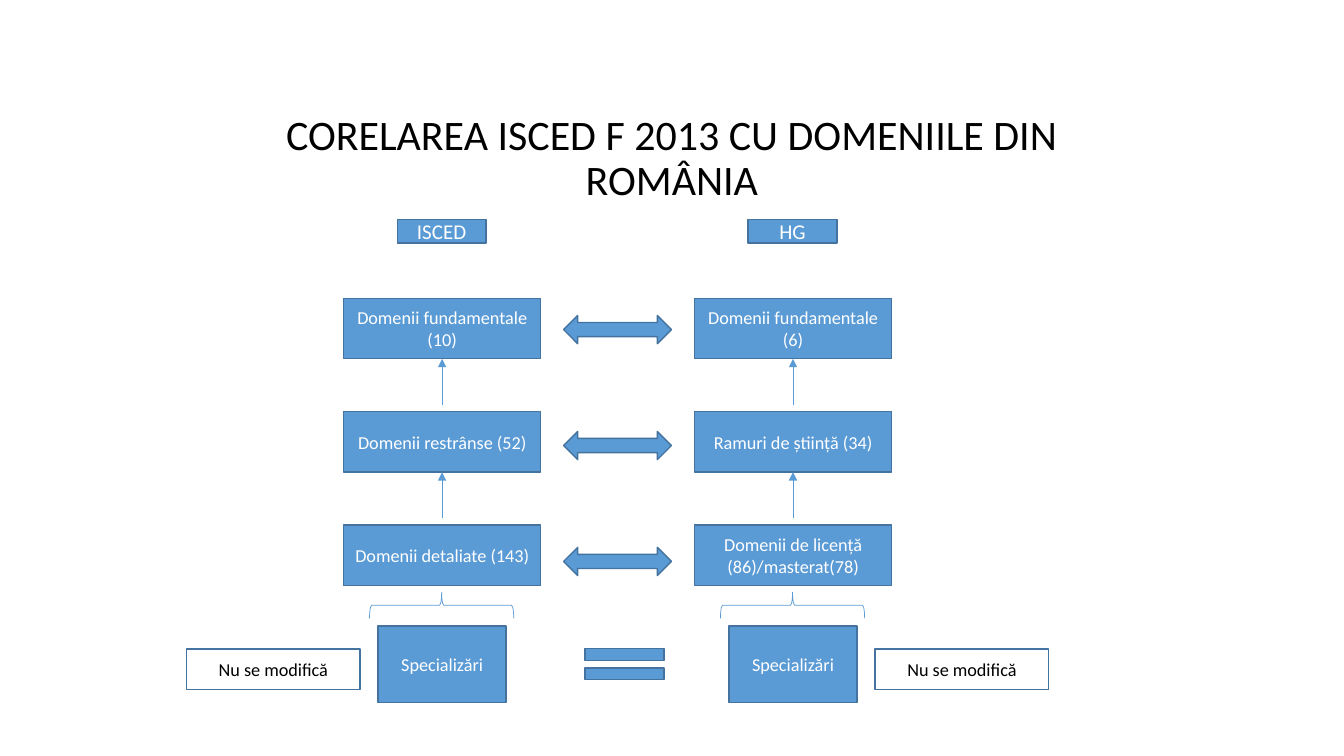
from pptx import Presentation
from pptx.dml.color import RGBColor
from pptx.enum.dml import MSO_THEME_COLOR
from pptx.enum.shapes import MSO_CONNECTOR, MSO_SHAPE
from pptx.enum.text import MSO_ANCHOR, MSO_AUTO_SIZE, PP_ALIGN
from pptx.oxml.ns import qn
from pptx.util import Inches, Pt
from lxml import etree

BLUE = RGBColor(0x5B, 0x9B, 0xD5)
EDGE = RGBColor(0x43, 0x73, 0x9E)
WHITE = RGBColor(0xFF, 0xFF, 0xFF)
BLACK = RGBColor(0, 0, 0)
RECT = MSO_SHAPE.RECTANGLE
BRACE = MSO_SHAPE.LEFT_BRACE
ARROW = MSO_SHAPE.LEFT_RIGHT_ARROW
EQUAL = MSO_SHAPE.MATH_EQUAL
LINE = MSO_CONNECTOR.STRAIGHT
MIDDLE = MSO_ANCHOR.MIDDLE
CENTER = PP_ALIGN.CENTER
FIXED = MSO_AUTO_SIZE.NONE

FRAME = {
    "word_wrap": True,
    "auto_size": FIXED,
    "vertical_anchor": MIDDLE,
    "margin_left": Inches(0.08),
    "margin_right": Inches(0.08),
    "margin_top": Inches(0.04),
    "margin_bottom": Inches(0.04),
}
WIDE = FRAME | {"margin_left": Inches(0.15), "margin_right": Inches(0.15)}


def apply(target, values):
    for name, value in values.items():
        setattr(target, name, value)


def write(shape, text, size, color, frame=FRAME, space=1.0):
    apply(shape.text_frame, frame)
    shape.text_frame.text = text
    para = shape.text_frame.paragraphs[0]
    apply(para, {"alignment": CENTER, "line_spacing": space})
    apply(para.font, {"name": "Calibri", "size": Pt(size), "bold": False})
    para.font.color.rgb = color


def add_shape(slide, kind, box, fill=BLUE, edge=EDGE, width=1):
    shape = slide.shapes.add_shape(kind, *map(Inches, box))
    shape.shadow.inherit = False
    if fill is None:
        shape.fill.background()
    else:
        shape.fill.solid()
        shape.fill.fore_color.rgb = fill
    shape.line.color.rgb = edge
    shape.line.width = Pt(width)
    return shape


def add_label(slide, box, text, size=13, fill=BLUE, color=WHITE):
    shape = add_shape(slide, RECT, box, fill)
    write(shape, text, size, color)
    return shape


def add_rise(slide, lower, upper):
    mid = upper.left + upper.width // 2
    line = slide.shapes.add_connector(
        LINE, mid, lower.top - Inches(0.07), mid, upper.top + upper.height)
    line.end_connect(upper, 2)
    line.line.color.rgb = BLUE
    line.line.width = Pt(0.5)
    props = line.line._get_or_add_ln()
    etree.SubElement(props, qn("a:tailEnd"), type="triangle")
    etree.SubElement(line._element.spPr, qn("a:effectLst"))


def draw_title(slide, box, text):
    title = slide.shapes.title
    names = ("left", "top", "width", "height")
    apply(title, dict(zip(names, map(Inches, box))))
    write(title, text, 30, BLACK, WIDE, 0.9)


def draw_column(slide, left, top, head, levels, side):
    add_label(slide, (left + 0.53, top, 0.88, 0.23), head, 15)
    boxes = [
        add_label(slide, (left, top + 0.78 + row * 1.125, 1.95, 0.6), text)
        for row, text in enumerate(levels)
    ]
    for upper, lower in zip(boxes, boxes[1:]):
        add_rise(slide, lower, upper)
    brace = add_shape(
        slide, BRACE, (left + 0.84, top + 3.11, 0.26, 1.43), None, BLUE, 0.5)
    brace.rotation = 90
    add_label(slide, (left + 0.34, top + 4.03, 1.27, 0.76), "Specializări")
    add_label(slide, (left + side, top + 4.26, 1.72, 0.4),
              "Nu se modifică", fill=None, color=BLACK)


def draw_links(slide, left, top):
    for row in range(3):
        add_shape(slide, ARROW, (left, top + row * 1.15, 1.07, 0.28))
    equal = add_shape(slide, EQUAL, (left + 0.07, top + 3.21, 1.07, 0.5))
    equal.adjustments[0] = 0.235
    equal.adjustments[1] = 0.144


def main():
    deck = Presentation()
    apply(deck, {"slide_width": Inches(13.33), "slide_height": Inches(7.5)})
    slide = deck.slides.add_slide(deck.slide_layouts[5])
    slide.background.fill.solid()
    slide.background.fill.fore_color.theme_color = MSO_THEME_COLOR.BACKGROUND_1
    draw_title(slide, (1.86, 1.09, 9.61, 0.98),
               "CORELAREA ISCED F 2013 CU DOMENIILE DIN ROMÂNIA")
    draw_column(slide, 3.41, 2.18, "ISCED", (
        "Domenii fundamentale (10)",
        "Domenii restrânse (52)",
        "Domenii detaliate (143)",
    ), -1.56)
    draw_column(slide, 6.89, 2.18, "HG", (
        "Domenii fundamentale (6)",
        "Ramuri de știință (34)",
        "Domenii de licență (86)/masterat(78)",
    ), 1.79)
    draw_links(slide, 5.59, 3.13)
    deck.save("out.pptx")


if __name__ == "__main__":
    main()
